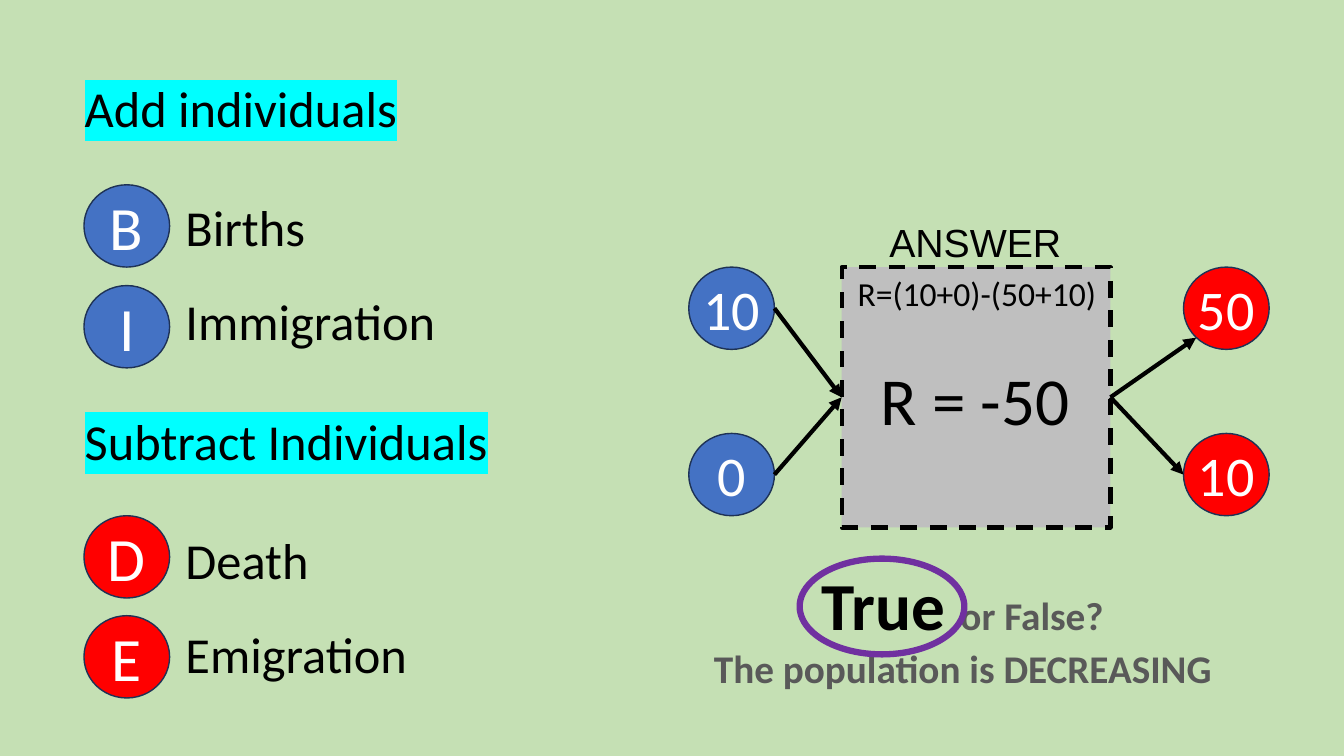
import lxml.etree
import pptx
import pptx.dml.color
import pptx.enum.dml
import pptx.enum.shapes
import pptx.enum.text
import pptx.oxml.ns
import pptx.util

COLORS = {
    "background": "C5E0B4", "gain": "4472C4", "loss": "FF0000", "outline": "1E3256",
    "box": "BFBFBF", "ink": "000000", "white": "FFFFFF", "muted": "595959",
    "ring": "7030A0", "highlight": "00FFFF",
}
WIDTH, HEIGHT = pptx.util.Inches(13.33), pptx.util.Inches(7.5)
COLUMNS, ROWS = 16, 9
SHAPE = pptx.enum.shapes.MSO_SHAPE
CENTER = pptx.enum.text.PP_ALIGN.CENTER
LEFT_SIDE, RIGHT_SIDE = 1, 3
OVAL_W, OVAL_H = 1.02, 0.98


def rgb(name):
    """Return a named colour."""
    return pptx.dml.color.RGBColor.from_string(COLORS[name])


def grid(*lengths):
    """Turn alternating columns and rows into slide lengths."""
    units = (WIDTH / COLUMNS, HEIGHT / ROWS)
    return [round(n * units[i % 2]) for i, n in enumerate(lengths)]


def set_font(font, size, color, name="Calibri", bold=None):
    """Format a paragraph or run font."""
    font.size, font.name, font.bold = pptx.util.Pt(size), name, bold
    font.color.rgb = rgb(color)


def add_shape(s, kind, place, fill, line, weight):
    """Add a flat shape with an outline and an optional fill."""
    sp = s.shapes.add_shape(kind, *grid(*place))
    sp.shadow.inherit = False
    if fill:
        sp.fill.solid()
        sp.fill.fore_color.rgb = rgb(fill)
    else:
        sp.fill.background()
    sp.line.color.rgb = rgb(line)
    sp.line.width = pptx.util.Pt(weight)
    return sp


def add_token(s, col, row, text, fill, size):
    """Add a circle holding a letter or a count."""
    sp = add_shape(s, SHAPE.OVAL, (col, row, OVAL_W, OVAL_H), fill, "outline", 1)
    tf = sp.text_frame
    tf.word_wrap = False
    tf.margin_left = tf.margin_right = tf.margin_top = tf.margin_bottom = 0
    tf.vertical_anchor = pptx.enum.text.MSO_ANCHOR.MIDDLE
    p = tf.paragraphs[0]
    p.text, p.alignment = text, CENTER
    set_font(p.font, size, "white")


def add_text_box(s, place):
    """Add a wrapping text box and return its text frame."""
    tf = s.shapes.add_textbox(*grid(*place)).text_frame
    tf.word_wrap = True
    return tf


def add_label(s, place, text, size, name="Calibri"):
    """Add one centred line of text."""
    p = add_text_box(s, place).paragraphs[0]
    p.text, p.alignment = text, CENTER
    set_font(p.font, size, "ink", name)


def highlight(r):
    """Put a highlight behind a run."""
    qn = pptx.oxml.ns.qn
    mark = lxml.etree.SubElement(r.font._element, qn("a:highlight"))
    lxml.etree.SubElement(mark, qn("a:srgbClr"), val=COLORS["highlight"])


def add_legend(s):
    """Add the headings and indented terms on the left."""
    tf = add_text_box(s, (0.89, 0.86, 5.93, 7.87))
    groups = (("Add individuals", "Births", "Immigration"),
              ("Subtract Individuals", "Death", "Emigration"))
    for g, terms in enumerate(groups):
        for i, term in enumerate(terms):
            p = tf.add_paragraph() if g or i else tf.paragraphs[0]
            r = p.add_run()
            r.text = term
            set_font(p.font, 36, "ink")
            if g or i:
                p.space_before = pptx.util.Pt(24 if i == 2 else 42)
            if i:
                p._p.get_or_add_pPr().set("marL", str(pptx.util.Inches(1)))
            else:
                highlight(r)


def add_arrow(s, box, side, point, inward):
    """Join a point to the middle of a side of the box with an arrow."""
    x, y = grid(*point)
    c = s.shapes.add_connector(pptx.enum.shapes.MSO_CONNECTOR.STRAIGHT, x, y, x, y)
    (c.end_connect if inward else c.begin_connect)(box, side)
    c.line.color.rgb = rgb("ink")
    c.line.width = pptx.util.Pt(3)
    qn = pptx.oxml.ns.qn
    lxml.etree.SubElement(c.line._get_or_add_ln(), qn("a:tailEnd"), type="triangle")
    lxml.etree.SubElement(c._element.spPr, qn("a:effectLst"))


def add_question(s):
    """Add the true or false question."""
    tf = add_text_box(s, (8.2, 6.65, 6.52, 1.66))
    p = tf.paragraphs[0]
    p.alignment = CENTER
    for text, size, color in (("True ", 48, "ink"), ("or False?", 28, "muted")):
        r = p.add_run()
        r.text = text
        set_font(r.font, size, color, bold=True)
    p = tf.add_paragraph()
    p.text, p.alignment = "The population is DECREASING", CENTER
    set_font(p.font, 28, "muted", bold=True)


def main():
    """Build the population change slide."""
    prs = pptx.Presentation()
    prs.slide_width, prs.slide_height = WIDTH, HEIGHT
    s = prs.slides.add_slide(prs.slide_layouts[6])
    s.background.fill.solid()
    s.background.fill.fore_color.rgb = rgb("background")

    add_legend(s)
    for letter, row, fill in (("B", 2.2, "gain"), ("I", 3.4, "gain"),
                              ("D", 6.14, "loss"), ("E", 7.33, "loss")):
        add_token(s, 1, row, letter, fill, 44)

    box = add_shape(s, SHAPE.RECTANGLE, (10.02, 3.18, 3.2, 3.1), "box", "ink", 3)
    box.line.dash_style = pptx.enum.dml.MSO_LINE.DASH
    top, bottom, gains, losses = 3.18, 5.16, 8.2, 14.09
    for col, row, count, fill in ((gains, top, "10", "gain"), (gains, bottom, "0", "gain"),
                                  (losses, top, "50", "loss"), (losses, bottom, "10", "loss")):
        add_token(s, col, row, count, fill, 40)
    for row in (top, bottom):
        add_arrow(s, box, LEFT_SIDE, (gains + OVAL_W, row + OVAL_H / 2), True)
    for point in ((losses + 0.15, top + 0.84), (losses, bottom + OVAL_H / 2)):
        add_arrow(s, box, RIGHT_SIDE, point, False)

    add_label(s, (10.16, 4.21, 2.9, 1.09), "R = -50", 48)
    add_label(s, (10.04, 3.19, 3.18, 0.6), "R=(10+0)-(50+10)", 24)
    add_question(s)
    add_label(s, (8.99, 2.54, 5.24, 0.68), "ANSWER", 28, "Arial")
    add_shape(s, SHAPE.OVAL, (9.52, 6.65, 1.96, 1.14), None, "ring", 4.5)
    prs.save("out.pptx")


if __name__ == "__main__":
    main()
